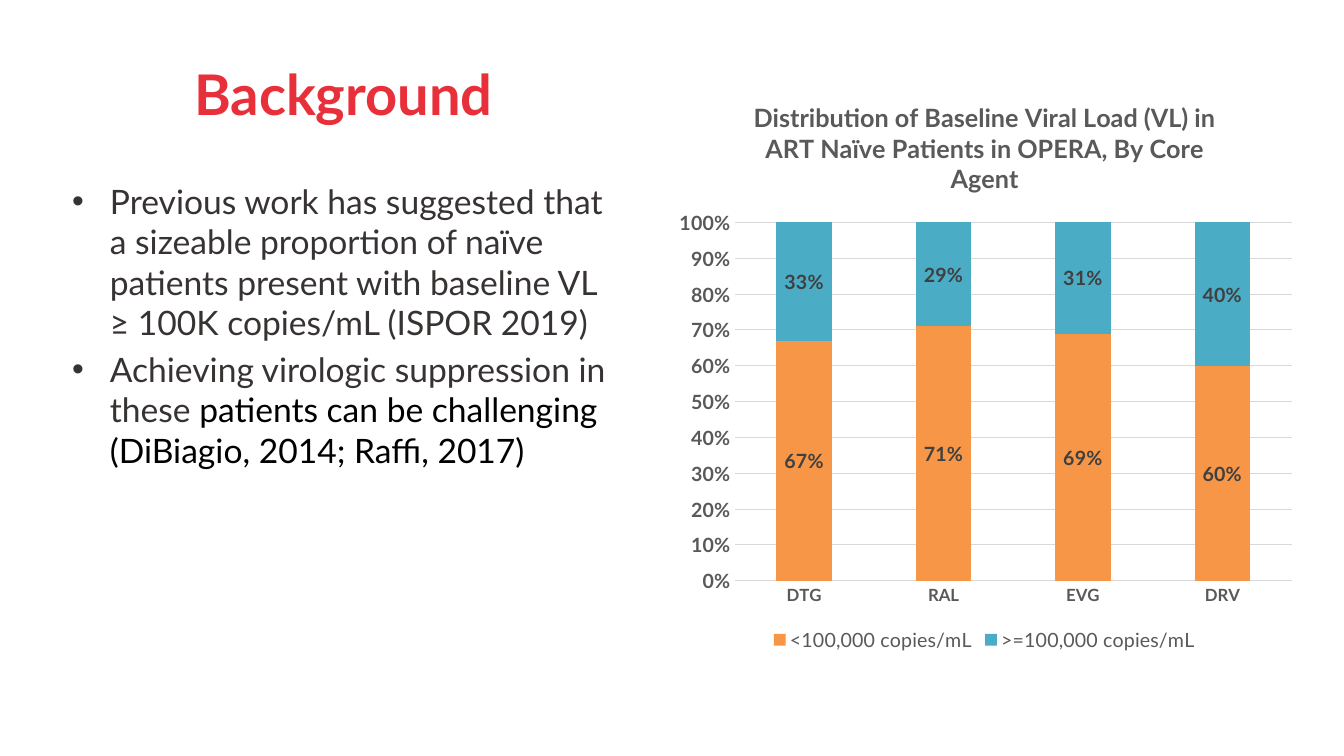
from lxml import etree
from pptx import Presentation
from pptx.chart.data import CategoryChartData
from pptx.dml.color import RGBColor
from pptx.enum.chart import XL_CHART_TYPE, XL_LABEL_POSITION, XL_LEGEND_POSITION, XL_TICK_MARK
from pptx.enum.text import MSO_ANCHOR, PP_ALIGN
from pptx.oxml.ns import qn
from pptx.util import Emu, Pt

STACKED = XL_CHART_TYPE.COLUMN_STACKED_100
LABEL_CENTER = XL_LABEL_POSITION.CENTER
LEGEND_BOTTOM = XL_LEGEND_POSITION.BOTTOM
NO_TICK = XL_TICK_MARK.NONE
MIDDLE = MSO_ANCHOR.MIDDLE
CENTER = PP_ALIGN.CENTER

EMU_PER_PX = 914400 / 100.8
FONT = "Lato"
COLORS = {
    "title": "E8303B",
    "body": "383333",
    "emphasis": "000000",
    "chart_text": "595959",
    "label": "404040",
    "grid": "D9D9D9",
    "low": "F79646",
    "high": "4BACC6",
}

BULLETS = [
    [("Previous work has suggested that a sizeable proportion of naïve patients "
      "present with baseline VL ≥ 100K copies/mL (ISPOR 2019)", "body")],
    [("Achieving virologic suppression in these ", "body"),
     ("patients can be challenging (DiBiagio, 2014; Raffi, 2017)", "emphasis")],
]
CHART_TITLE = ("Distribution of Baseline Viral Load (VL) in ART Naïve Patients "
               "in OPERA, By Core Agent")
AGENTS = ["DTG", "RAL", "EVG", "DRV"]
VIRAL_LOADS = [
    ("<100,000 copies/mL", [0.67, 0.71, 0.69, 0.6], "low"),
    (">=100,000 copies/mL", [0.33, 0.29, 0.31, 0.4], "high"),
]
PLOT_LAYOUT = {"x": 0.11, "y": 0.25, "w": 0.87, "h": 0.62}


def px(length):
    """Turn pixels into EMU."""
    return Emu(round(length * EMU_PER_PX))


def rgb(name):
    """Look up a colour by its role."""
    return RGBColor.from_string(COLORS[name])


def style_font(font, size, color, bold=False):
    """Set typeface, size, colour and weight."""
    font.name = FONT
    font.size = Pt(size)
    font.bold = bold
    font.color.rgb = rgb(color)


def place(placeholder, left, top, width, height):
    """Move and size a placeholder in pixels."""
    placeholder.left, placeholder.top = px(left), px(top)
    placeholder.width, placeholder.height = px(width), px(height)


def fill_heading(heading):
    """Write the slide title."""
    place(heading, 62, 30, 563, 126)
    heading.text_frame.text = "Background"
    heading.text_frame.vertical_anchor = MIDDLE
    paragraph = heading.text_frame.paragraphs[0]
    paragraph.alignment = CENTER
    style_font(paragraph.runs[0].font, 40, "title", True)


def fill_bullets(body):
    """Write the bullet list, one paragraph per bullet."""
    place(body, 62, 176, 563, 499)
    frame = body.text_frame
    for index, pieces in enumerate(BULLETS):
        paragraph = frame.add_paragraph() if index else frame.paragraphs[0]
        for text, color in pieces:
            run = paragraph.add_run()
            run.text = text
            style_font(run.font, 24, color)


def style_line(line):
    """Apply the thin grey line of the grid and axis."""
    line.color.rgb = rgb("grid")
    line.width = Pt(0.75)


def style_axes(chart):
    """Format the agent axis and the percentage axis."""
    agents, shares = chart.category_axis, chart.value_axis
    for axis, size in ((agents, 12), (shares, 14)):
        axis.major_tick_mark = axis.minor_tick_mark = NO_TICK
        style_font(axis.tick_labels.font, size, "chart_text", True)
    style_line(agents.format.line)
    shares.format.line.fill.background()
    shares.has_major_gridlines = True
    style_line(shares.major_gridlines.format.line)
    shares.minimum_scale, shares.maximum_scale, shares.major_unit = 0, 1, 0.1
    shares.tick_labels.number_format = "0%"
    shares.tick_labels.number_format_is_linked = False


def style_series(series, color):
    """Colour a series and show its values as percentages."""
    series.format.fill.solid()
    series.format.fill.fore_color.rgb = rgb(color)
    labels = series.data_labels
    labels.show_value = True
    labels.number_format = "0%"
    labels.number_format_is_linked = False
    labels.position = LABEL_CENTER
    style_font(labels.font, 14, "label", True)


def fix_plot_area(chart):
    """Set the inner plot area as fractions of the chart."""
    plot_area = chart.element.find(".//" + qn("c:plotArea"))
    for old_layout in plot_area.findall(qn("c:layout")):
        plot_area.remove(old_layout)
    layout = etree.Element(qn("c:layout"))
    manual = etree.SubElement(layout, qn("c:manualLayout"))
    settings = [("layoutTarget", "inner"), ("xMode", "edge"), ("yMode", "edge")]
    for tag, value in settings + list(PLOT_LAYOUT.items()):
        etree.SubElement(manual, qn(f"c:{tag}")).set("val", str(value))
    plot_area.insert(0, layout)


def add_viral_load_chart(slide):
    """Add the stacked chart of baseline viral load by core agent."""
    data = CategoryChartData(number_format="0%")
    data.categories = AGENTS
    for name, shares, _ in VIRAL_LOADS:
        data.add_series(name, shares)
    chart = slide.shapes.add_chart(STACKED, px(664), px(78), px(641), px(578), data).chart
    style_font(chart.font, 10, "emphasis")
    chart.has_title = True
    chart.chart_title.include_in_layout = False
    chart.chart_title.text_frame.text = CHART_TITLE
    style_font(chart.chart_title.text_frame.paragraphs[0].runs[0].font, 18, "chart_text", True)
    chart.has_legend = True
    chart.legend.position = LEGEND_BOTTOM
    chart.legend.include_in_layout = False
    style_font(chart.legend.font, 14, "chart_text")
    plot = chart.plots[0]
    plot.gap_width, plot.overlap = 150, 100
    plot.vary_by_categories = False
    for series, (_, _, color) in zip(plot.series, VIRAL_LOADS):
        style_series(series, color)
    style_axes(chart)
    fix_plot_area(chart)


def main():
    """Build and save the slide."""
    deck = Presentation()
    deck.slide_width, deck.slide_height = px(1344), px(756)
    slide = deck.slides.add_slide(deck.slide_layouts[1])
    fill_heading(slide.shapes.title)
    fill_bullets(slide.placeholders[1])
    add_viral_load_chart(slide)
    deck.save("out.pptx")


if __name__ == "__main__":
    main()
